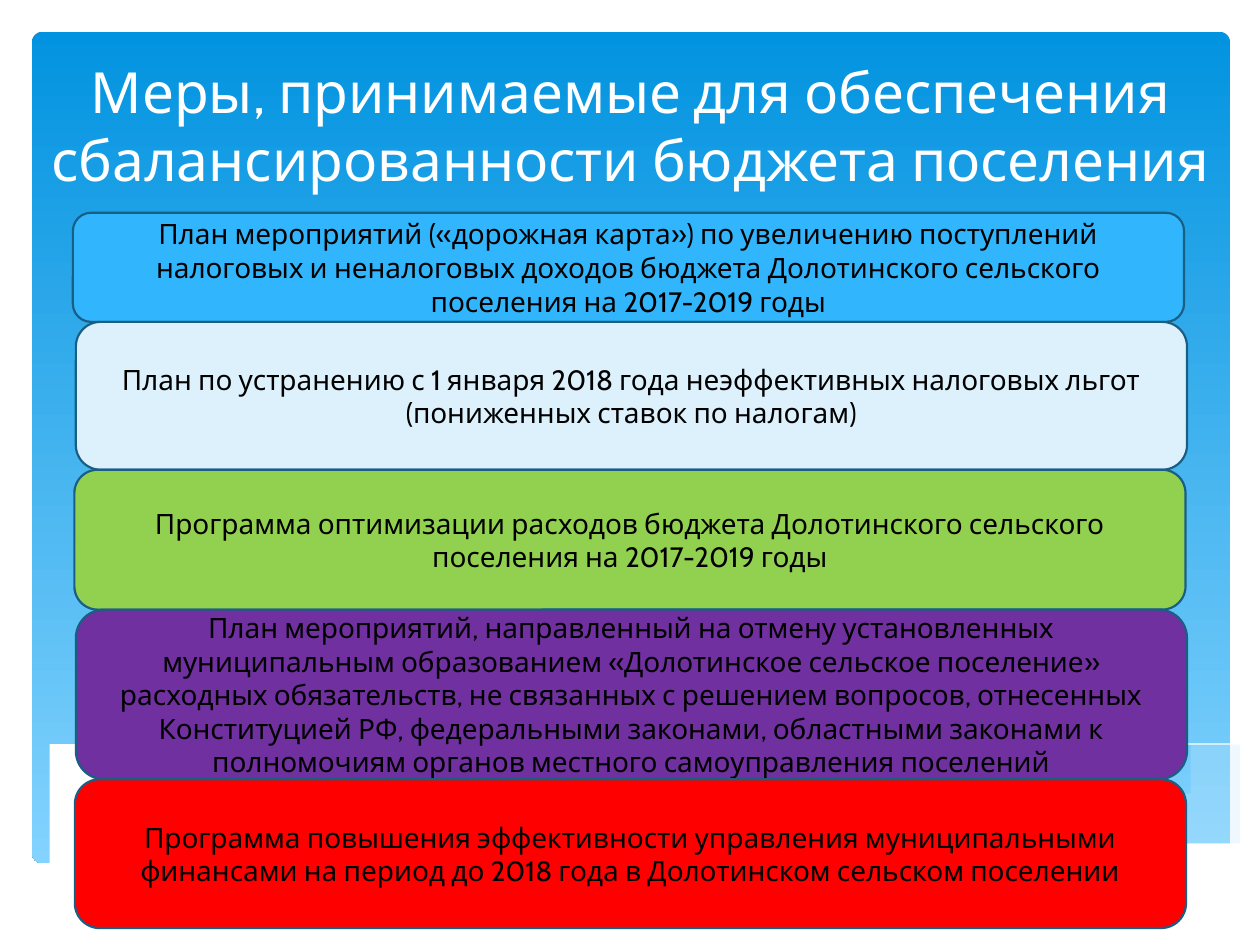
from lxml import etree
from pptx import Presentation
from pptx import util as u
from pptx.dml.color import RGBColor
from pptx.enum import shapes, text
from pptx.oxml.ns import qn

COLORS = {
    "sky_top": "0293E0", "sky_bottom": "83D3FE", "wave": "C6E7FC",
    "white": "FFFFFF", "black": "000000", "outline": "195F84",
    "blue": "31B6FD", "pale": "DDF1FD", "green": "92D050",
    "purple": "7030A0", "red": "FF0000",
}
paint = {name: RGBColor.from_string(value) for name, value in COLORS.items()}


def smooth(knots, steps=6):
    """Points of a Catmull-Rom curve through the knots."""
    padded = [knots[0], *knots, knots[-1]]
    curve = [knots[0]]
    for a, b, c, d in zip(padded, padded[1:], padded[2:], padded[3:]):
        for step in range(1, steps + 1):
            t = step / steps
            curve.append(tuple(
                q + t / 2 * (r - p + t * (2 * p - 5 * q + 4 * r - s + t * (3 * (q - r) + s - p)))
                for p, q, r, s in zip(a, b, c, d)))
    return curve


def write_text(shape, words, size, color, anchor):
    frame = shape.text_frame
    for key, value in {"word_wrap": True, "vertical_anchor": anchor}.items():
        setattr(frame, key, value)
    para = frame.paragraphs[0]
    para.alignment = text.PP_ALIGN.CENTER
    span = para.add_run()
    span.text = words
    for key, value in {"name": "Cabin", "size": u.Pt(size)}.items():
        setattr(span.font, key, value)
    span.font.color.rgb = paint[color]


deck = Presentation()
deck.slide_width, deck.slide_height = u.Cm(25.4), u.Cm(19.05)
page = deck.slides.add_slide(deck.slide_layouts[6])
rounded = shapes.MSO_SHAPE.ROUNDED_RECTANGLE

# Sky panel
sky = page.shapes.add_shape(rounded, u.Cm(0.64), u.Cm(0.64), u.Cm(24.16), u.Cm(16.76))
sky.adjustments[0] = 0.013
sky.shadow.inherit = False
sky.line.fill.background()
sky.fill.gradient()
sky.fill.gradient_angle = 270
for stop, name in zip(sky.fill.gradient_stops, ("sky_top", "sky_bottom")):
    stop.color.rgb = paint[name]

# Waves: fill (None for a bare line), opacity in percent, curved edges in cm
waves = [
    ("wave", 29, [[(24.81, 15.27), (21.9, 15.88), (16.81, 16.94)],
                  [(20.42, 17.27), (22.86, 17.09), (24.81, 16.48)]]),
    ("wave", 40, [[(22.71, 17.15), (16, 15.85), (11.81, 15.06), (7.29, 15.06)],
                  [(11.43, 15.85), (17.3, 17.02), (22.71, 17.15)]]),
    (None, 100, [[(7.87, 15.16), (11.46, 14.96), (16.18, 15.49), (23.06, 17.09)]]),
    (None, 100, [[(15.6, 16.74), (20.5, 15.54), (24.79, 14.91)]]),
    ("white", 100, [[(24.81, 16.46), (22.83, 17.04), (20.55, 17.25), (17.48, 17.02),
                     (11.35, 15.8), (7.42, 15.04), (4.5, 14.88), (2.41, 15.06),
                     (1.17, 15.37), (0.58, 15.62)],
                    [(0.58, 18.57), (24.81, 18.57)]]),
]
for color, opacity, edges in waves:
    points = [point for edge in edges for point in smooth(edge)]
    builder = page.shapes.build_freeform(*points[0], scale=u.Cm(1))
    builder.add_line_segments(points[1:], close=color is not None)
    wave = builder.convert_to_shape()
    wave.shadow.inherit = False
    if color is None:
        wave.fill.background()
        wave.line.color.rgb = paint["white"]
        wave.line.width = u.Pt(0)
        continue
    wave.line.fill.background()
    wave.fill.solid()
    wave.fill.fore_color.rgb = paint[color]
    if opacity < 100:
        tint = wave.element.spPr.find(".//" + qn("a:srgbClr"))
        etree.SubElement(tint, qn("a:alpha"), val=str(opacity * 1000))

# Title
title = page.shapes.add_textbox(u.Cm(0.71), u.Cm(0.74), u.Cm(24), u.Cm(3.27))
write_text(title, "Меры, принимаемые для обеспечения сбалансированности бюджета поселения",
           32.4, "white", text.MSO_ANCHOR.BOTTOM)

# Stack of measures: fill, left, height, wording
measures = [
    ("blue", 1.47, 2.2, "План мероприятий («дорожная карта») по увеличению поступлений "
     "налоговых и неналоговых доходов бюджета Долотинского сельского поселения "
     "на 2017-2019 годы"),
    ("pale", 1.53, 2.98, "План по устранению с 1 января 2018 года неэффективных "
     "налоговых льгот (пониженных ставок по налогам)"),
    ("green", 1.5, 2.82, "Программа оптимизации расходов бюджета Долотинского "
     "сельского поселения на 2017-2019 годы"),
    ("purple", 1.53, 3.42, "План мероприятий, направленный на отмену установленных "
     "муниципальным образованием «Долотинское сельское поселение» расходных "
     "обязательств, не связанных с решением вопросов, отнесенных Конституцией РФ, "
     "федеральными законами, областными законами к полномочиям органов местного "
     "самоуправления поселений"),
    ("red", 1.51, 3, "Программа повышения эффективности управления муниципальными "
     "финансами на период до 2018 года в Долотинском сельском поселении"),
]
top = 4.29
for color, left, height, words in measures:
    box = page.shapes.add_shape(rounded, u.Cm(left), u.Cm(top), u.Cm(22.4), u.Cm(height))
    box.shadow.inherit = False
    box.fill.solid()
    box.fill.fore_color.rgb = paint[color]
    box.line.color.rgb = paint["outline"]
    box.line.width = u.Pt(1.25)
    write_text(box, words, 16, "black", text.MSO_ANCHOR.MIDDLE)
    top += height

deck.save("out.pptx")
